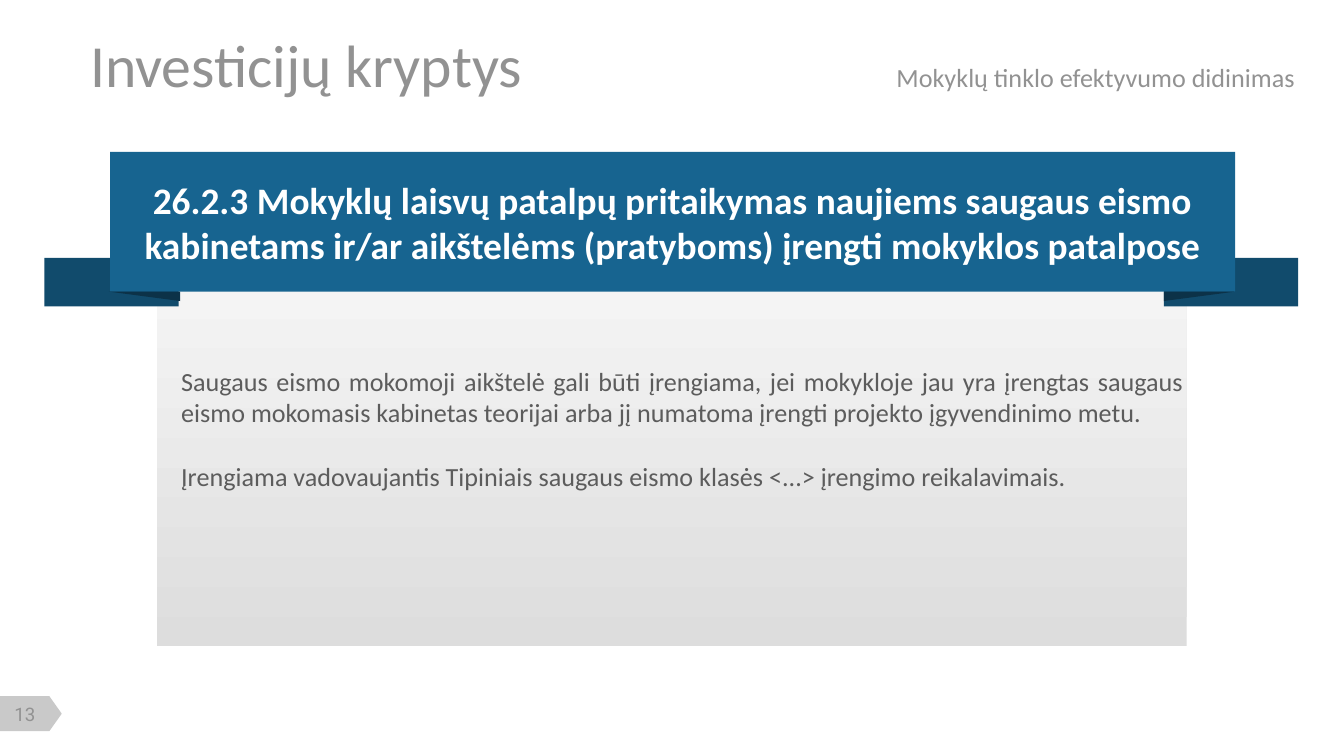
from lxml import etree
from pptx import Presentation
from pptx import util as u
from pptx.dml.color import RGBColor
from pptx.enum import shapes, text
from pptx.oxml.ns import qn

WHITE = RGBColor(0xFF, 0xFF, 0xFF)
GREY = RGBColor(0x92, 0x92, 0x92)
TAG_GREY = RGBColor(0xC9, 0xC9, 0xC9)
BODY_GREY = RGBColor(0x5C, 0x5C, 0x5C)
PANEL_TOP = RGBColor(0xF4, 0xF4, 0xF4)
PANEL_BOTTOM = RGBColor(0xDD, 0xDD, 0xDD)
BLUE = RGBColor(0x17, 0x64, 0x90)
DARK_BLUE = RGBColor(0x11, 0x4B, 0x6C)
FOLD_BLUE = RGBColor(0x0C, 0x32, 0x48)

SHAPE = shapes.MSO_SHAPE
ALIGN = text.PP_ALIGN
ANCHOR = text.MSO_ANCHOR


class SlideBuilder:
    font = "Calibri"

    def __init__(self, slide):
        self.slide = slide

    def place(self, shape, box):
        shape.left, shape.top, shape.width, shape.height = map(u.Inches, box)

    def paint(self, shape, color):
        shape.fill.solid()
        shape.fill.fore_color.rgb = color
        shape.line.fill.background()
        shape.shadow.inherit = False

    def run(self, paragraph, words, size, color, bold=False, font=None):
        run = paragraph.add_run()
        run.text = words
        run.font.size = u.Pt(size)
        run.font.name = font or self.font
        run.font.bold = bold
        run.font.color.rgb = color

    def frame(self, shape, anchor, insets=(0.1, 0.05, 0.1, 0.05)):
        frame = shape.text_frame
        frame.word_wrap = True
        frame.auto_size = text.MSO_AUTO_SIZE.NONE
        frame.vertical_anchor = anchor
        (frame.margin_left, frame.margin_top,
         frame.margin_right, frame.margin_bottom) = map(u.Inches, insets)
        return frame

    def title(self, box, heading, subtitle, tab):
        shape = self.slide.shapes.title
        self.place(shape, box)
        frame = self.frame(shape, ANCHOR.MIDDLE, (0, 0.05, 0.1, 0.05))
        paragraph = frame.paragraphs[0]
        paragraph.alignment = ALIGN.LEFT
        tabs = etree.SubElement(paragraph._p.get_or_add_pPr(), qn("a:tabLst"))
        etree.SubElement(tabs, qn("a:tab"), pos=str(u.Inches(tab)), algn="l")
        self.run(paragraph, heading + "\t", 32, GREY)
        self.run(paragraph, subtitle, 14, GREY)

    def block(self, box, color, kind=SHAPE.RECTANGLE, rotation=0):
        shape = self.slide.shapes.add_shape(kind, *map(u.Inches, box))
        shape.rotation = rotation
        self.paint(shape, color)
        return shape

    def gradient_panel(self, box, top, bottom):
        fill = self.block(box, top).fill
        fill.gradient()
        fill.gradient_angle = 90
        for stop, color in zip(fill.gradient_stops, (bottom, top)):
            stop.color.rgb = color

    def text_box(self, box, paragraphs, size, color, align, anchor=ANCHOR.TOP,
                 insets=(0.1, 0.05, 0.1, 0.05), gap=0, font=None):
        shape = self.slide.shapes.add_textbox(*map(u.Inches, box))
        frame = self.frame(shape, anchor, insets)
        for index, words in enumerate(paragraphs):
            paragraph = frame.add_paragraph() if index else frame.paragraphs[0]
            paragraph.alignment = align
            if index:
                paragraph.space_before = u.Pt(gap)
            self.run(paragraph, words, size, color, font=font)

    def banner(self, box, words):
        frame = self.frame(self.block(box, BLUE), ANCHOR.MIDDLE)
        paragraph = frame.paragraphs[0]
        paragraph.alignment = ALIGN.CENTER
        self.run(paragraph, words, 20, WHITE, bold=True)

    def fold(self, outer, inner, top, bottom):
        points = [(u.Inches(x), u.Inches(y)) for x, y in
                  ((outer, top), (inner, top), (inner, bottom))]
        builder = self.slide.shapes.build_freeform(*points[0])
        builder.add_line_segments(points[1:], close=True)
        self.paint(builder.convert_to_shape(), FOLD_BLUE)


def main():
    # Widescreen page, 16:9
    presentation = Presentation()
    presentation.slide_width = u.Inches(10)
    presentation.slide_height = u.Inches(10) * 9 // 16
    slide = presentation.slides.add_slide(presentation.slide_layouts[5])
    builder = SlideBuilder(slide)

    # Page number tag
    builder.block((0.1, 5.08, 0.26, 0.46), TAG_GREY,
                  SHAPE.FLOWCHART_OFFPAGE_CONNECTOR, 270)
    builder.text_box((0.02, 5.23, 0.33, 0.17), ["13"], 10, GREY, ALIGN.CENTER,
                     ANCHOR.MIDDLE, (0, 0, 0, 0), font="Roboto")

    # Title with the topic on the right
    builder.title((0.67, 0.28, 9.15, 0.39), "Investicijų kryptys",
                  "Mokyklų tinklo efektyvumo didinimas", 6)

    # Body panel
    builder.gradient_panel((1.17, 2.15, 7.66, 2.66), PANEL_TOP, PANEL_BOTTOM)
    builder.text_box((1.25, 2.67, 7.66, 1.28), [
        "Saugaus eismo mokomoji aikštelė gali būti įrengiama, jei mokykloje "
        "jau yra įrengtas saugaus eismo mokomasis kabinetas teorijai arba jį "
        "numatoma įrengti projekto įgyvendinimo metu.",
        "Įrengiama vadovaujantis Tipiniais saugaus eismo klasės <...> "
        "įrengimo reikalavimais.",
    ], 14, BODY_GREY, ALIGN.JUSTIFY, gap=17)

    # Ribbon: tails, front band, folds
    for left in (0.33, 8.66):
        builder.block((left, 1.92, 1, 0.36), DARK_BLUE)
    builder.banner((0.82, 1.13, 8.37, 1.04),
                   "26.2.3 Mokyklų laisvų patalpų pritaikymas naujiems saugaus "
                   "eismo kabinetams ir/ar aikštelėms (pratyboms) įrengti "
                   "mokyklos patalpose")
    for outer, inner in ((0.81, 1.34), (9.19, 8.66)):
        builder.fold(outer, inner, 2.17, 2.24)

    presentation.save("out.pptx")


if __name__ == "__main__":
    main()
